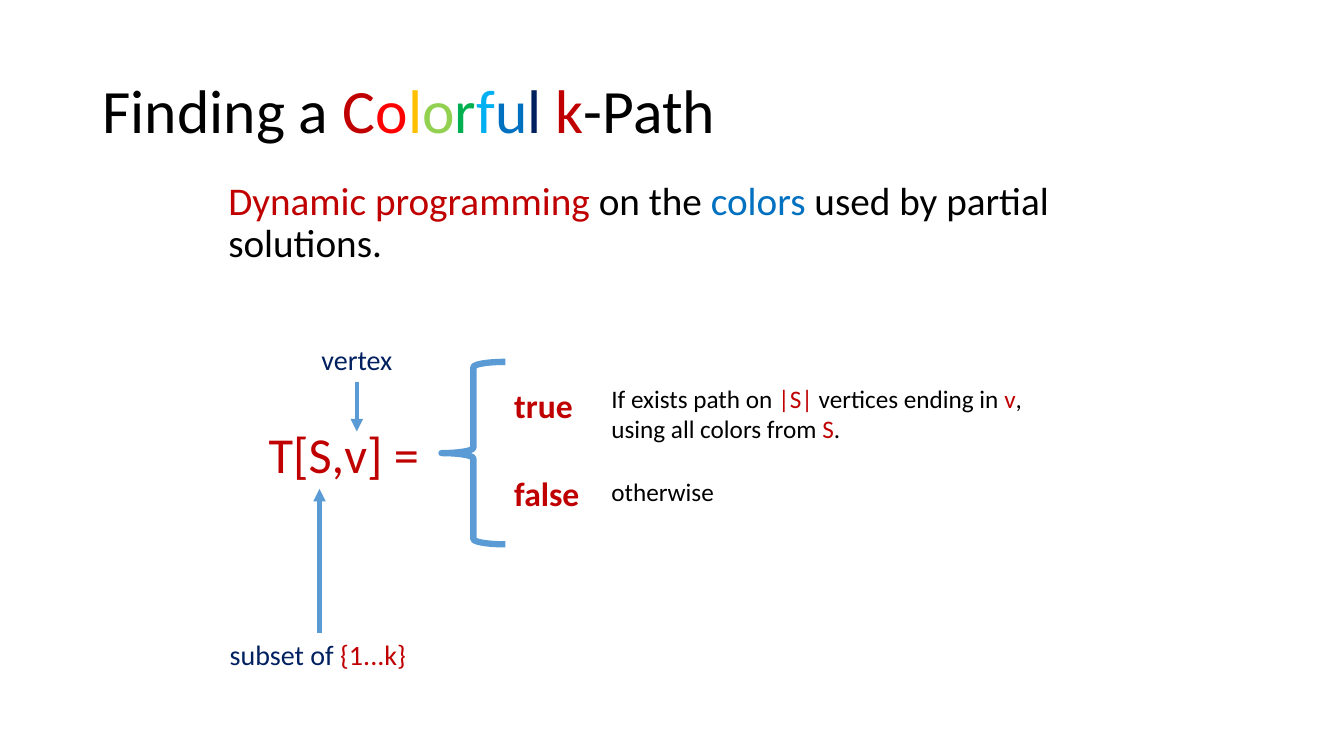
from pptx import Presentation
from pptx.dml.color import RGBColor
from pptx.enum.shapes import MSO_CONNECTOR, MSO_SHAPE
from pptx.enum.text import MSO_ANCHOR, MSO_AUTO_SIZE, PP_ALIGN
from pptx.oxml.ns import qn
from pptx.util import Inches, Pt
from lxml.etree import SubElement

BLACK = RGBColor(0x00, 0x00, 0x00)
DARK_RED = RGBColor(0xC0, 0x00, 0x00)
RED = RGBColor(0xFF, 0x00, 0x00)
GOLD = RGBColor(0xFF, 0xC0, 0x00)
LIME = RGBColor(0x92, 0xD0, 0x50)
GREEN = RGBColor(0x00, 0xB0, 0x50)
SKY = RGBColor(0x00, 0xB0, 0xF0)
BLUE = RGBColor(0x00, 0x70, 0xC0)
NAVY = RGBColor(0x00, 0x20, 0x60)
LINE_BLUE = RGBColor(0x5B, 0x9B, 0xD5)
FONT = "Calibri"

# Slide grid: 40 columns by 30 rows
WIDTH, HEIGHT = Inches(13.33), Inches(7.5)
COL, ROW = WIDTH / 40, HEIGHT / 30


def grid(x, y):
    return round(x * COL), round(y * ROW)


def place(shape, box):
    shape.left, shape.top = grid(*box[:2])
    shape.width, shape.height = grid(*box[2:])


def write(tf, runs, size, bold=False):
    """Fill the first paragraph with (text, colour) runs."""
    p = tf.paragraphs[0]
    p.alignment = PP_ALIGN.LEFT
    p.font.name, p.font.size, p.font.bold = FONT, Pt(size), bold
    for text, color in runs:
        for i, line in enumerate(text.split("\n")):
            if i:
                p.add_line_break()
            r = p.add_run()
            r.text = line
            r.font.color.rgb = color
    return p


def add_text(s, box, runs, size, bold=False, wrap=False):
    tf = s.shapes.add_textbox(*grid(*box[:2]), *grid(*box[2:])).text_frame
    tf.word_wrap = wrap
    tf.auto_size = MSO_AUTO_SIZE.NONE
    return write(tf, runs, size, bold)


def add_arrow(s, start, end):
    line = s.shapes.add_connector(MSO_CONNECTOR.STRAIGHT, *grid(*start), *grid(*end))
    line.line.color.rgb, line.line.width = LINE_BLUE, Pt(3)
    SubElement(line.line._get_or_add_ln(), qn("a:tailEnd"), type="triangle")
    SubElement(line._element.spPr, qn("a:effectLst"))


def add_title(s, box):
    title = s.shapes.title
    place(title, box)
    tf = title.text_frame
    tf.vertical_anchor = MSO_ANCHOR.MIDDLE
    tf.auto_size = MSO_AUTO_SIZE.NONE
    rainbow = zip("Colorfu", (DARK_RED, RED, GOLD, LIME, GREEN, SKY, BLUE))
    runs = [("Finding a ", BLACK), *rainbow, ("l ", NAVY), ("k", DARK_RED), ("-Path", BLACK)]
    write(tf, runs, 44).line_spacing = 0.9


def add_intro(s, box):
    runs = [("Dynamic programming ", DARK_RED), ("on the ", BLACK),
            ("colors", BLUE), (" used by partial solutions.", BLACK)]
    p = add_text(s, box, runs, 28, wrap=True)
    p.line_spacing, p.space_before = 0.9, Pt(10)


def add_cases(s, box):
    """Brace with one row per truth value and its condition."""
    x, y, w, h = box
    brace = s.shapes.add_shape(MSO_SHAPE.LEFT_BRACE, *grid(x, y), *grid(1.9, h))
    brace.shadow.inherit = False
    brace.fill.background()
    brace.line.color.rgb, brace.line.width = LINE_BLUE, Pt(4.5)
    condition = [("If exists path on ", BLACK), ("|S| ", DARK_RED),
                 ("vertices ending in ", BLACK), ("v", DARK_RED),
                 (",\nusing all colors from ", BLACK), ("S", DARK_RED), (".", BLACK)]
    cases = [("true", 2.37, 0.1, condition, 0.09, 2.84),
             ("false", 2.58, 0.58, [("otherwise", BLACK)], 0.6, 1.6)]
    for value, value_w, value_y, runs, runs_y, runs_h in cases:
        add_text(s, (x + 1.87, y + value_y * h, value_w, 2), [(value, DARK_RED)], 24, bold=True)
        add_text(s, (x + 4.76, y + runs_y * h, w - 4.76, runs_h), runs, 18, wrap=True)


def add_recurrence(s, box):
    """Table entry T[S,v], its two labels with arrows, and its cases."""
    x, y, w, h = box
    label_h = 1.76
    add_text(s, (x + 1.2, y + 3.2, 5.46, 2.84), [("T[S,v] =", DARK_RED)], 36)
    add_cases(s, (x + 6.64, y + 0.96, w - 6.64, 7.24))
    # Labels
    subset_y = y + h - label_h
    add_text(s, (x + 0.04, subset_y, 5.94, label_h), [("subset of ", NAVY), ("{1...k}", DARK_RED)], 20)
    add_text(s, (x + 2.77, y, 2.73, label_h), [("vertex", NAVY)], 20)
    # Arrows from the labels to the entry
    add_arrow(s, (x + 4.12, y + label_h), (x + 4.12, y + 3.72))
    add_arrow(s, (x + 3.01, subset_y), (x + 3.01, y + 6))


def main():
    prs = Presentation()
    prs.slide_width, prs.slide_height = WIDTH, HEIGHT
    s = prs.slides.add_slide(prs.slide_layouts[5])
    add_title(s, (2.75, 1.6, 34.5, 5.8))
    add_intro(s, (6.5, 7, 27, 5.5))
    add_recurrence(s, (6.5, 13.4, 25.4, 13.48))
    prs.save("out.pptx")


if __name__ == "__main__":
    main()
